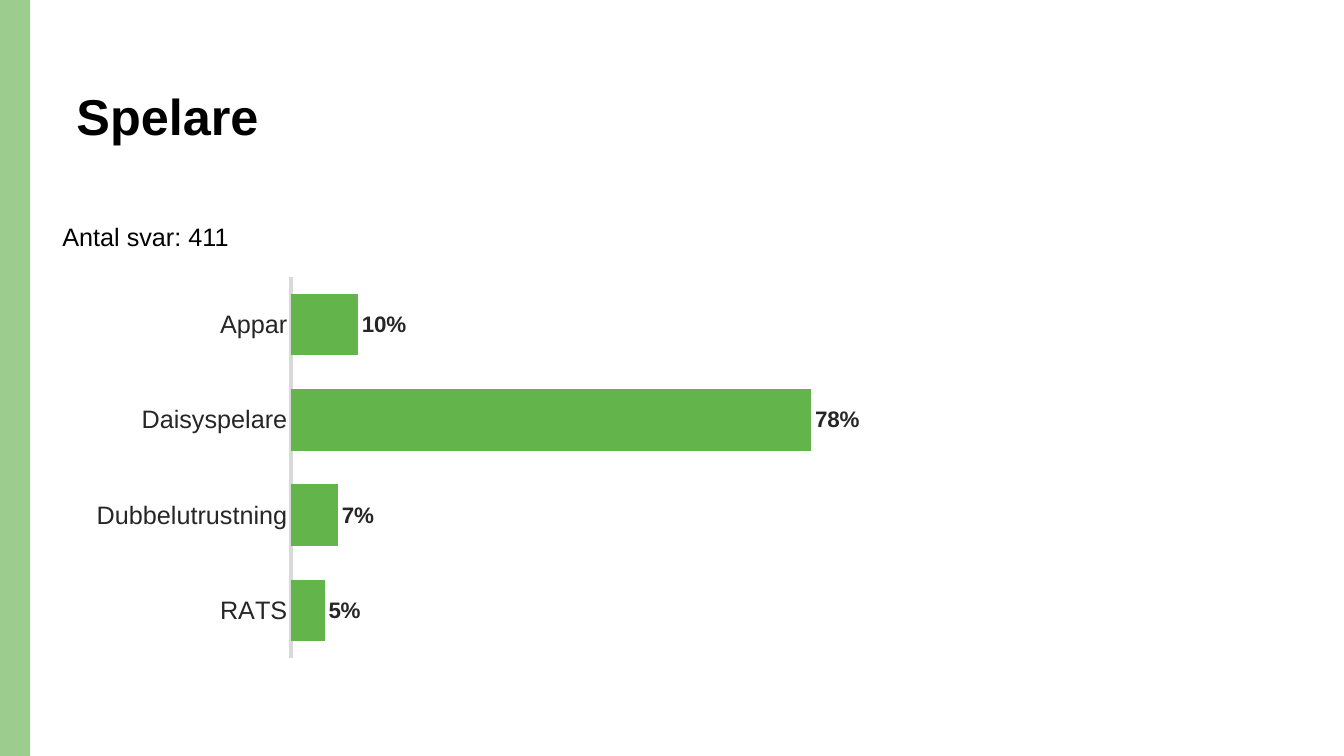
from dataclasses import dataclass

from lxml.etree import SubElement
from pptx import Presentation
from pptx.chart.data import CategoryChartData
from pptx.dml.color import RGBColor
from pptx.enum.chart import XL_CHART_TYPE, XL_LABEL_POSITION, XL_TICK_LABEL_POSITION, XL_TICK_MARK
from pptx.enum.shapes import MSO_SHAPE
from pptx.enum.text import MSO_ANCHOR
from pptx.oxml.ns import qn
from pptx.util import Emu, Pt

EMU_PER_PX = 9144  # 100 px to the inch
SLIDE_WIDTH, SLIDE_HEIGHT = 1333, 750
COLORS = {
    "side_band": "9DCC8F",
    "text": "000000",
    "bar": "63B44B",
    "chart_text": "262626",
    "axis": "D9D9D9",
}
PLAYER_SHARES = {"Appar": 0.10, "Daisyspelare": 0.78, "Dubbelutrustning": 0.07, "RATS": 0.05}
PLOT_LAYOUT = {"x": 0.279, "y": 0.017, "w": 0.701, "h": 0.971}


@dataclass(frozen=True)
class Box:
    left: int
    top: int
    width: int
    height: int

    def emu(self) -> tuple:
        return tuple(px(n) for n in (self.left, self.top, self.width, self.height))


@dataclass(frozen=True)
class TextBlock:
    text: str
    box: Box
    size: int
    bold: bool
    anchor: MSO_ANCHOR


TEXT_BLOCKS = (
    TextBlock("Spelare", Box(66, 51, 1195, 99), 36, True, MSO_ANCHOR.BOTTOM),
    TextBlock("Antal svar: 411", Box(52, 218, 1008, 50), 18, False, MSO_ANCHOR.TOP),
)


def px(length: int) -> Emu:
    return Emu(length * EMU_PER_PX)


def color(name: str) -> RGBColor:
    return RGBColor.from_string(COLORS[name])


def set_attributes(target, values: dict) -> None:
    for name, value in values.items():
        setattr(target, name, value)


def format_font(font, size: int, color_name: str, bold: bool = False) -> None:
    set_attributes(font, {"name": "Arial", "size": Pt(size), "bold": bold})
    font.color.rgb = color(color_name)


def draw_side_band(slide) -> None:
    band = slide.shapes.add_shape(MSO_SHAPE.RECTANGLE, *Box(0, 0, 30, SLIDE_HEIGHT).emu())
    band.shadow.inherit = False
    band.fill.solid()
    band.fill.fore_color.rgb = color("side_band")
    band.line.fill.background()


def draw_text(slide, block: TextBlock) -> None:
    frame = slide.shapes.add_textbox(*block.box.emu()).text_frame
    set_attributes(frame, {"word_wrap": True, "vertical_anchor": block.anchor})
    paragraph = frame.paragraphs[0]
    paragraph.line_spacing = 0.9
    run = paragraph.add_run()
    run.text = block.text
    format_font(run.font, block.size, "text", block.bold)


def place_plot(chart) -> None:
    plot_area = chart._chartSpace.chart.plotArea
    for old_layout in plot_area.findall(qn("c:layout")):
        plot_area.remove(old_layout)
    layout = SubElement(plot_area, qn("c:layout"))
    plot_area.insert(0, layout)
    manual = SubElement(layout, qn("c:manualLayout"))
    settings = {"layoutTarget": "inner", "xMode": "edge", "yMode": "edge", **PLOT_LAYOUT}
    for name, value in settings.items():
        SubElement(manual, qn(f"c:{name}")).set("val", str(value))


def draw_chart(slide, box: Box) -> None:
    data = CategoryChartData(number_format="0%")
    data.categories = list(PLAYER_SHARES)
    data.add_series("Series 1", list(PLAYER_SHARES.values()))
    chart = slide.shapes.add_chart(XL_CHART_TYPE.BAR_CLUSTERED, *box.emu(), data).chart
    set_attributes(chart, {"has_legend": False, "has_title": False})
    format_font(chart.font, 16, "chart_text")
    place_plot(chart)

    # Axes
    axis = chart.category_axis
    set_attributes(axis, {
        "reverse_order": True,
        "has_major_gridlines": False,
        "major_tick_mark": XL_TICK_MARK.NONE,
        "minor_tick_mark": XL_TICK_MARK.NONE,
        "tick_label_position": XL_TICK_LABEL_POSITION.NEXT_TO_AXIS,
    })
    format_font(axis.tick_labels.font, 18, "chart_text")
    axis.format.line.color.rgb = color("axis")
    axis.format.line.width = Pt(2.5)
    set_attributes(chart.value_axis, {
        "visible": False,
        "has_major_gridlines": False,
        "minimum_scale": 0,
        "maximum_scale": 0.9,
    })

    # Bars and their labels
    plot = chart.plots[0]
    set_attributes(plot, {"gap_width": 55, "vary_by_categories": False})
    series = plot.series[0]
    series.format.fill.solid()
    series.format.fill.fore_color.rgb = color("bar")
    labels = series.data_labels
    set_attributes(labels, {
        "show_value": True,
        "position": XL_LABEL_POSITION.OUTSIDE_END,
        "number_format": "0%",
        "number_format_is_linked": False,
    })
    format_font(labels.font, 16, "chart_text", bold=True)


def main() -> None:
    presentation = Presentation()
    set_attributes(presentation, {"slide_width": px(SLIDE_WIDTH), "slide_height": px(SLIDE_HEIGHT)})
    slide = presentation.slides.add_slide(presentation.slide_layouts[6])
    draw_side_band(slide)
    for block in TEXT_BLOCKS:
        draw_text(slide, block)
    draw_chart(slide, Box(52, 268, 849, 390))
    presentation.save("out.pptx")


if __name__ == "__main__":
    main()
